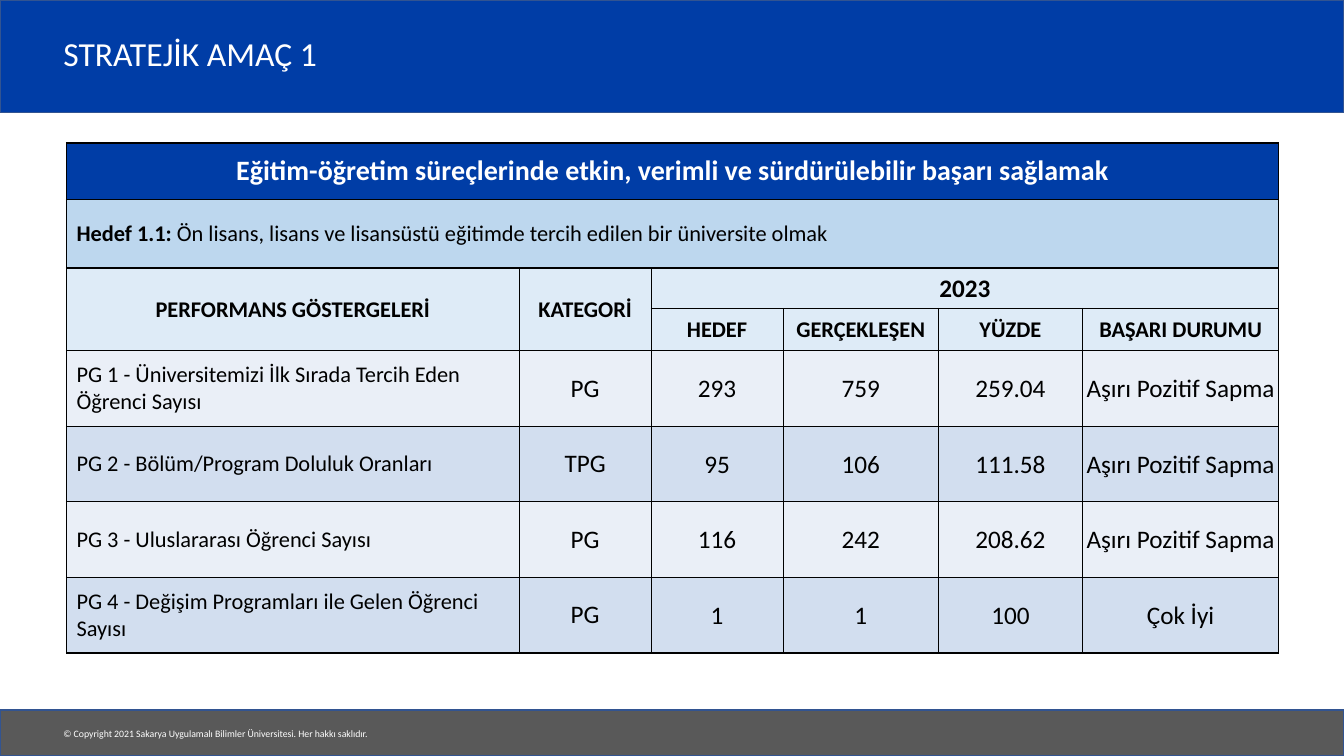
"""Build the strategic goal slide with its table of performance indicators."""
from dataclasses import dataclass

import lxml.etree
import pptx
import pptx.dml.color
import pptx.enum.shapes
import pptx.enum.text
import pptx.oxml.ns
import pptx.slide
import pptx.table
import pptx.text.text
import pptx.util

Pt = pptx.util.Pt
ALIGN = pptx.enum.text.PP_ALIGN
MIDDLE = pptx.enum.text.MSO_ANCHOR.MIDDLE

COLORS = {
    "blue": "003DA6",
    "footer": "595959",
    "outline": "325491",
    "target": "BDD7EE",
    "heading": "DEEBF7",
    "odd": "EAEFF7",
    "even": "D2DEEF",
    "white": "FFFFFF",
    "black": "000000",
}
FONT = "Calibri"
SLIDE_WIDTH, SLIDE_HEIGHT = 960, 540
COLUMN_WIDTHS = (323.3, 94.3, 94.3, 110.9, 103, 140.2)
ROW_HEIGHTS = (40.3, 49, 24.5, 30.2, 54, 54, 54, 54)
FIRST_INDICATOR_ROW = 4


@dataclass(frozen=True)
class Run:
    text: str
    size: float = 16
    bold: bool = False
    color: str = "black"


@dataclass(frozen=True)
class Band:
    top: float
    height: float
    fill: str


@dataclass(frozen=True)
class Caption:
    left: float
    top: float
    width: float
    height: float
    run: Run
    wrap: bool
    line_spacing: float


@dataclass(frozen=True)
class Entry:
    row: int
    column: int
    runs: tuple[Run, ...]
    fill: str
    row_span: int = 1
    column_span: int = 1
    centred: bool = True
    tight: bool = False


@dataclass(frozen=True)
class Indicator:
    name: str
    category: str
    results: tuple[str, str, str, str]


BANDS = (Band(0, 80.6, "blue"), Band(507.3, 32.7, "footer"))
CAPTIONS = (
    Caption(38.2, 516.2, 236.9, 15.8, Run(
        "© Copyright 2021 Sakarya Uygulamalı Bilimler Üniversitesi. Her hakkı saklıdır.",
        7, color="white"), False, 1),
    Caption(38.2, 13.7, 794.2, 52.6, Run("STRATEJİK AMAÇ 1", 24, color="white"), True, 0.9),
)
HEADINGS = (
    Entry(0, 0, (Run("Eğitim-öğretim süreçlerinde etkin, verimli ve sürdürülebilir başarı sağlamak",
                     20, True, "white"),), "blue", column_span=6),
    Entry(1, 0, (Run("Hedef 1.1: ", bold=True),
                 Run("Ön lisans, lisans ve lisansüstü eğitimde tercih edilen bir üniversite olmak")),
          "target", column_span=6, centred=False),
    Entry(2, 0, (Run("PERFORMANS GÖSTERGELERİ", bold=True),), "heading", row_span=2),
    Entry(2, 1, (Run("KATEGORİ", bold=True),), "heading", row_span=2),
    Entry(2, 2, (Run("2023", 18, True),), "heading", column_span=4),
)
RESULT_HEADINGS = ("HEDEF", "GERÇEKLEŞEN", "YÜZDE", "BAŞARI DURUMU")
INDICATORS = (
    Indicator("PG 1 - Üniversitemizi İlk Sırada Tercih Eden Öğrenci Sayısı", "PG",
              ("293", "759", "259.04", "Aşırı Pozitif Sapma")),
    Indicator("PG 2 - Bölüm/Program Doluluk Oranları", "TPG",
              ("95", "106", "111.58", "Aşırı Pozitif Sapma")),
    Indicator("PG 3 - Uluslararası Öğrenci Sayısı", "PG",
              ("116", "242", "208.62", "Aşırı Pozitif Sapma")),
    Indicator("PG 4 - Değişim Programları ile Gelen Öğrenci Sayısı", "PG",
              ("1", "1", "100", "Çok İyi")),
)


def rgb(name: str) -> pptx.dml.color.RGBColor:
    return pptx.dml.color.RGBColor.from_string(COLORS[name])


def add_run(paragraph: pptx.text.text._Paragraph, content: Run) -> None:
    run = paragraph.add_run()
    run.text = content.text
    run.font.name = FONT
    run.font.size = Pt(content.size)
    run.font.bold = content.bold
    run.font.color.rgb = rgb(content.color)


def draw_band(slide: pptx.slide.Slide, band: Band) -> None:
    bar = slide.shapes.add_shape(pptx.enum.shapes.MSO_SHAPE.RECTANGLE,
                                 0, Pt(band.top), Pt(SLIDE_WIDTH), Pt(band.height))
    bar.shadow.inherit = False
    bar.fill.solid()
    bar.fill.fore_color.rgb = rgb(band.fill)
    bar.line.color.rgb = rgb("outline")
    bar.line.width = Pt(1)


def draw_caption(slide: pptx.slide.Slide, caption: Caption) -> None:
    frame = slide.shapes.add_textbox(Pt(caption.left), Pt(caption.top),
                                     Pt(caption.width), Pt(caption.height)).text_frame
    frame.word_wrap = caption.wrap
    frame.vertical_anchor = MIDDLE
    frame.paragraphs[0].line_spacing = caption.line_spacing
    add_run(frame.paragraphs[0], caption.run)


def draw_borders(cell: pptx.table._Cell) -> None:
    qn = pptx.oxml.ns.qn
    properties = cell._tc.get_or_add_tcPr()
    for position, side in enumerate("LRTB"):
        border = lxml.etree.Element(qn(f"a:ln{side}"), w=str(Pt(1)))
        fill = lxml.etree.SubElement(border, qn("a:solidFill"))
        lxml.etree.SubElement(fill, qn("a:srgbClr"), val=COLORS["black"])
        properties.insert(position, border)


def fill_entry(table: pptx.table.Table, entry: Entry) -> None:
    last_row = entry.row + entry.row_span - 1
    last_column = entry.column + entry.column_span - 1
    cell = table.cell(entry.row, entry.column)
    if entry.row_span * entry.column_span > 1:
        cell.merge(table.cell(last_row, last_column))
    for row in range(entry.row, last_row + 1):
        for column in range(entry.column, last_column + 1):
            part = table.cell(row, column)
            part.fill.solid()
            part.fill.fore_color.rgb = rgb(entry.fill)
            draw_borders(part)
    cell.vertical_anchor = MIDDLE
    if entry.tight:
        cell.margin_left = cell.margin_right = cell.margin_top = Pt(0.75)
        cell.margin_bottom = 0
    paragraph = cell.text_frame.paragraphs[0]
    paragraph.alignment = ALIGN.CENTER if entry.centred else ALIGN.LEFT
    for run in entry.runs:
        add_run(paragraph, run)


def table_entries() -> list[Entry]:
    entries = list(HEADINGS)
    for column, heading in enumerate(RESULT_HEADINGS, 2):
        entries.append(Entry(3, column, (Run(heading, bold=True),), "heading"))
    for index, indicator in enumerate(INDICATORS):
        row = FIRST_INDICATOR_ROW + index
        fill = "even" if index % 2 else "odd"
        entries.append(Entry(row, 0, (Run(indicator.name),), fill, centred=False))
        entries.append(Entry(row, 1, (Run(indicator.category, 18),), fill))
        for column, result in enumerate(indicator.results, 2):
            entries.append(Entry(row, column, (Run(result, 18),), fill, tight=True))
    return entries


def draw_table(slide: pptx.slide.Slide) -> None:
    table = slide.shapes.add_table(len(ROW_HEIGHTS), len(COLUMN_WIDTHS), Pt(47.5), Pt(102.2),
                                   Pt(sum(COLUMN_WIDTHS)), Pt(sum(ROW_HEIGHTS))).table
    table.first_row = table.horz_banding = False
    for column, width in zip(table.columns, COLUMN_WIDTHS):
        column.width = Pt(width)
    for row, height in zip(table.rows, ROW_HEIGHTS):
        row.height = Pt(height)
    for entry in table_entries():
        fill_entry(table, entry)


def main() -> None:
    deck = pptx.Presentation()
    deck.slide_width, deck.slide_height = Pt(SLIDE_WIDTH), Pt(SLIDE_HEIGHT)
    slide = deck.slides.add_slide(deck.slide_layouts[6])
    for band in BANDS:
        draw_band(slide, band)
    for caption in CAPTIONS:
        draw_caption(slide, caption)
    draw_table(slide)
    deck.save("out.pptx")


if __name__ == "__main__":
    main()
